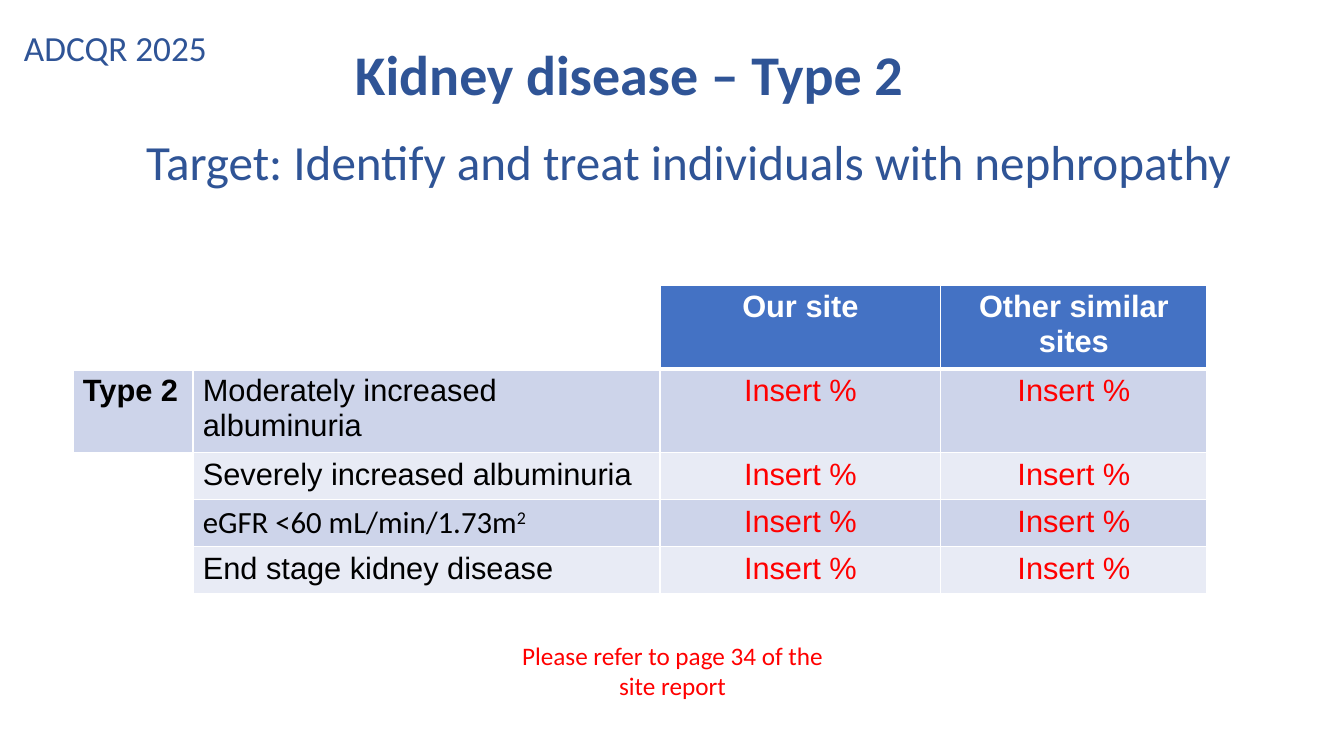
import pptx
import pptx.util
import pptx.dml.color
import pptx.enum.text
import pptx.oxml

RGB = pptx.dml.color.RGBColor
ALIGN = pptx.enum.text.PP_ALIGN
ANCHOR = pptx.enum.text.MSO_ANCHOR
NAVY = RGB(0x2F, 0x54, 0x96)
BLUE = RGB(0x44, 0x72, 0xC4)
BAND_DARK = RGB(0xCD, 0xD4, 0xEA)
BAND_LIGHT = RGB(0xE8, 0xEB, 0xF5)
WHITE = RGB(0xFF, 0xFF, 0xFF)
BLACK = RGB(0, 0, 0)
RED = RGB(0xFF, 0, 0)

MEASURES = ["Moderately increased albuminuria", "Severely increased albuminuria",
            "eGFR <60 mL/min/1.73m", "End stage kidney disease"]
HEADERS = ["", "", "Our site", "Other similar sites"]
COLUMNS = [120, 467, 281, 266]
ROW = 47


def px(n):
    """Turn slide pixels into EMU."""
    return pptx.util.Emu(round(n * 914400 / 100.8))


def write(p, text, size, color, font="Calibri", bold=False, align=None, spacing=None, raised=False):
    """Add one formatted run to a paragraph."""
    r = p.add_run()
    r.text = text
    r.font.size = pptx.util.Pt(size)
    r.font.name = font
    r.font.bold = bold
    r.font.color.rgb = color
    if raised:
        r.font._element.set("baseline", "30000")
    if align is not None:
        p.alignment = align
    if spacing is not None:
        p.line_spacing = spacing


def text_box(s, box, text, size, color, anchor=ANCHOR.TOP, inset=5, **fmt):
    """Place a wrapping text box in the given box."""
    tf = s.shapes.add_textbox(*map(px, box)).text_frame
    tf.word_wrap = True
    tf.vertical_anchor = anchor
    tf.margin_left = tf.margin_right = px(10)
    tf.margin_top = tf.margin_bottom = px(inset)
    write(tf.paragraphs[0], text, size, color, **fmt)


def style_cell(cell, fill, top=1, bottom=1):
    """Fill a cell and give it white borders."""
    tcPr = cell._tc.get_or_add_tcPr()
    for side, width in zip("LRTB", (1, 1, top, bottom)):
        tcPr.append(pptx.oxml.parse_xml(
            f'<a:ln{side} xmlns:a="http://schemas.openxmlformats.org/drawingml/2006/main" '
            f'w="{width * 12700}"><a:solidFill><a:srgbClr val="{WHITE}"/></a:solidFill></a:ln{side}>'))
    cell.fill.solid()
    cell.fill.fore_color.rgb = fill
    cell.margin_left = cell.margin_right = px(10)
    cell.margin_top = cell.margin_bottom = px(5)


def results_table(s, left, top):
    """Draw the kidney disease results table."""
    rows = len(MEASURES) + 1
    table = s.shapes.add_table(rows, len(COLUMNS), px(left), px(top),
                               px(sum(COLUMNS)), px(ROW * rows)).table
    for column, width in zip(table.columns, COLUMNS):
        column.width = px(width)
    for row in table.rows:
        row.height = px(ROW)
    for i, header in enumerate(HEADERS):
        cell = table.cell(0, i)
        style_cell(cell, BLUE if header else WHITE, bottom=3)
        if header:
            write(cell.text_frame.paragraphs[0], header, 22, WHITE, font="Arial",
                  bold=True, align=ALIGN.CENTER)
    for j, measure in enumerate(MEASURES, 1):
        band = BAND_DARK if j % 2 else BAND_LIGHT
        cells = [table.cell(j, i) for i in range(len(COLUMNS))]
        for i, cell in enumerate(cells):
            style_cell(cell, WHITE if i == 0 and j > 1 else band, top=3 if j == 1 else 1)
        label, name, *values = [cell.text_frame.paragraphs[0] for cell in cells]
        if j == 1:
            write(label, "Type 2", 22, BLACK, font="Arial", bold=True)
        is_egfr = measure.startswith("eGFR")
        write(name, measure, 22, BLACK, font="Calibri" if is_egfr else "Arial")
        if is_egfr:
            write(name, "2", 22, BLACK, raised=True)
        for p in values:
            write(p, "Insert %", 22, RED, font="Arial", align=ALIGN.CENTER)


def kidney_slide(prs):
    """Build the kidney disease slide."""
    s = prs.slides.add_slide(prs.slide_layouts[6])
    text_box(s, (14, 27, 204, 47), "ADCQR 2025", 25.2, NAVY, anchor=ANCHOR.MIDDLE, spacing=0.9)
    text_box(s, (136, 133, 1137, 102), "Target: Identify and treat individuals with nephropathy",
             35.1, NAVY, spacing=0.9)
    text_box(s, (345, 34, 980, 78), "Kidney disease – Type 2", 40, NAVY, bold=True)
    results_table(s, 73, 285)
    text_box(s, (507, 630, 331, 82), "Please refer to page 34 of the site report", 18, RED,
             inset=10, align=ALIGN.CENTER)


def main():
    """Create and save the presentation."""
    prs = pptx.Presentation()
    prs.slide_width, prs.slide_height = px(1344), px(756)
    kidney_slide(prs)
    prs.save("out.pptx")


if __name__ == "__main__":
    main()
